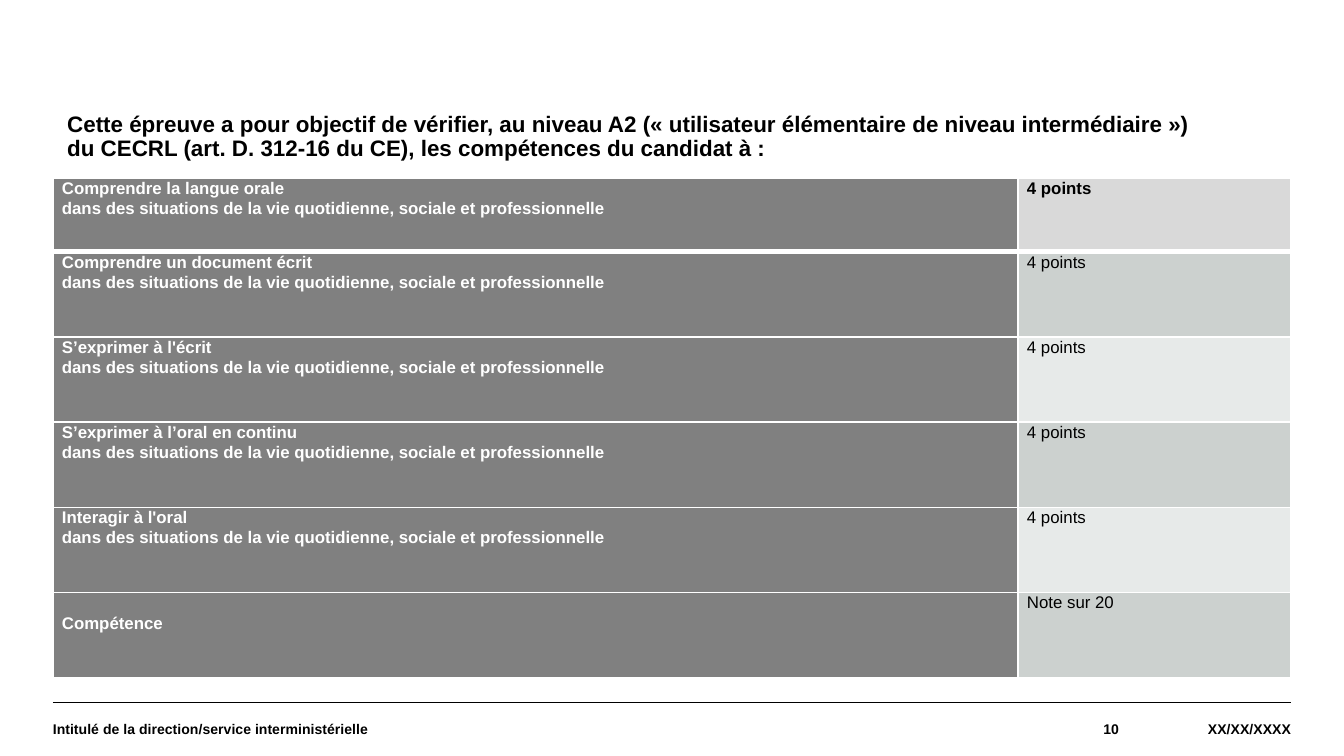
from lxml.etree import SubElement
from pptx import Presentation
from pptx.dml.color import RGBColor
from pptx.enum.shapes import MSO_CONNECTOR
from pptx.enum.text import MSO_ANCHOR, MSO_AUTO_SIZE, PP_ALIGN
from pptx.oxml.ns import qn
from pptx.util import Cm, Pt

BLACK = RGBColor(0x00, 0x00, 0x00)
WHITE = RGBColor(0xFF, 0xFF, 0xFF)
DARK_GREY = RGBColor(0x80, 0x80, 0x80)
HEADER_GREY = RGBColor(0xD9, 0xD9, 0xD9)
BAND_GREYS = (RGBColor(0xE7, 0xEA, 0xE9), RGBColor(0xCC, 0xD1, 0xCF))

CONTEXT = "dans des situations de la vie quotidienne, sociale et professionnelle"
SKILLS = (
    "Comprendre la langue orale",
    "Comprendre un document écrit",
    "S’exprimer à l'écrit",
    "S’exprimer à l’oral en continu",
    "Interagir à l'oral",
)
ROWS = [((skill, CONTEXT), "4 points") for skill in SKILLS]
ROWS.append((("Compétence",), "Note sur 20"))
LEFT, RIGHT = 1, 24.4
FOOTER_TOP = 13.28


def write_text(frame, *lines, size=9, color=BLACK, bold=True,
               align=PP_ALIGN.LEFT, spacing=1.0):
    """Fill a text frame with one formatted paragraph per line."""
    for index, line in enumerate(lines):
        para = frame.add_paragraph() if index else frame.paragraphs[0]
        para.alignment = align
        para.line_spacing = spacing
        para.space_before = para.space_after = Pt(0)
        span = para.add_run()
        span.text = line
        span.font.name = "Arial"
        span.font.size = Pt(size)
        span.font.bold = bold
        span.font.color.rgb = color


def prepare_frame(frame, anchor):
    """Give a text frame no insets, wrapping and a fixed size."""
    frame.margin_left = frame.margin_right = 0
    frame.margin_top = frame.margin_bottom = 0
    frame.word_wrap = True
    frame.auto_size = MSO_AUTO_SIZE.NONE
    frame.vertical_anchor = anchor


def add_title(page, text):
    """Place the title in the layout's title placeholder."""
    title = page.shapes.title
    title.left, title.top = Cm(1.27), Cm(2.13)
    title.width, title.height = Cm(21.49), Cm(1.2)
    prepare_frame(title.text_frame, MSO_ANCHOR.TOP)
    write_text(title.text_frame, text, size=12, spacing=0.9)


def add_footer_text(page, text, left, width, align=PP_ALIGN.LEFT):
    """Add one text of the footer band."""
    box = page.shapes.add_textbox(Cm(left), Cm(FOOTER_TOP), Cm(width), Cm(1))
    prepare_frame(box.text_frame, MSO_ANCHOR.MIDDLE)
    write_text(box.text_frame, text, size=7.5, align=align)


def add_footer_rule(page):
    """Draw the line above the footer."""
    rule = page.shapes.add_connector(MSO_CONNECTOR.STRAIGHT, Cm(LEFT), Cm(FOOTER_TOP),
                                     Cm(RIGHT), Cm(FOOTER_TOP))
    rule.line.color.rgb = BLACK
    rule.line.width = Pt(0.8)
    SubElement(rule._element.spPr, qn("a:effectLst"))


def set_border(cell, side, width):
    """Draw one white cell border; side is L, R, T or B."""
    properties = cell._tc.get_or_add_tcPr()
    border = SubElement(properties, qn(f"a:ln{side}"), w=str(Pt(width)))
    fill = SubElement(border, qn("a:solidFill"))
    SubElement(fill, qn("a:srgbClr"), val=str(WHITE))


def format_cell(cell, fill, *lines, top=0, bottom_width=1, **text_format):
    """Set the borders, fill, insets and text of a table cell."""
    for side, width in (("L", 1), ("R", 1), ("T", 1), ("B", bottom_width)):
        set_border(cell, side, width)
    cell.fill.solid()
    cell.fill.fore_color.rgb = fill
    cell.margin_left = cell.margin_right = Cm(0.17)
    cell.margin_top, cell.margin_bottom = Cm(top), 0
    cell.vertical_anchor = MSO_ANCHOR.TOP
    write_text(cell.text_frame, *lines, spacing=1.07, **text_format)


def add_points_table(page):
    """Add the table of skills and their points."""
    heights = [1.4] + [1.61] * (len(ROWS) - 1)
    table = page.shapes.add_table(len(ROWS), 2, Cm(LEFT), Cm(3.36),
                                  Cm(RIGHT - LEFT), Cm(sum(heights))).table
    table.first_row = table.horz_banding = False
    table.columns[0].width, table.columns[1].width = Cm(18.24), Cm(5.16)
    for index, (lines, points) in enumerate(ROWS):
        table.rows[index].height = Cm(heights[index])
        header = index == 0
        bottom_width = 3 if header else 1
        fill = HEADER_GREY if header else BAND_GREYS[index % 2]
        top = 0.38 if len(lines) == 1 else 0
        format_cell(table.cell(index, 0), DARK_GREY, *lines, top=top,
                    bottom_width=bottom_width, color=WHITE)
        format_cell(table.cell(index, 1), fill, points,
                    bottom_width=bottom_width, bold=header)


def main():
    """Build and save the deck."""
    deck = Presentation()
    deck.slide_width, deck.slide_height = Cm(25.4), Cm(14.29)
    page = deck.slides.add_slide(deck.slide_layouts[5])
    add_footer_rule(page)
    add_title(page, "Cette épreuve a pour objectif de vérifier, au niveau A2 "
                    "(« utilisateur élémentaire de niveau intermédiaire ») du CECRL "
                    "(art. D. 312-16 du CE), les compétences du candidat à :")
    add_footer_text(page, "XX/XX/XXXX", 21.15, 3.25, PP_ALIGN.RIGHT)
    add_footer_text(page, "Intitulé de la direction/service interministérielle", LEFT, 16.4)
    add_footer_text(page, "10", 17.4, 3.75, PP_ALIGN.RIGHT)
    add_points_table(page)
    deck.save("out.pptx")


if __name__ == "__main__":
    main()
